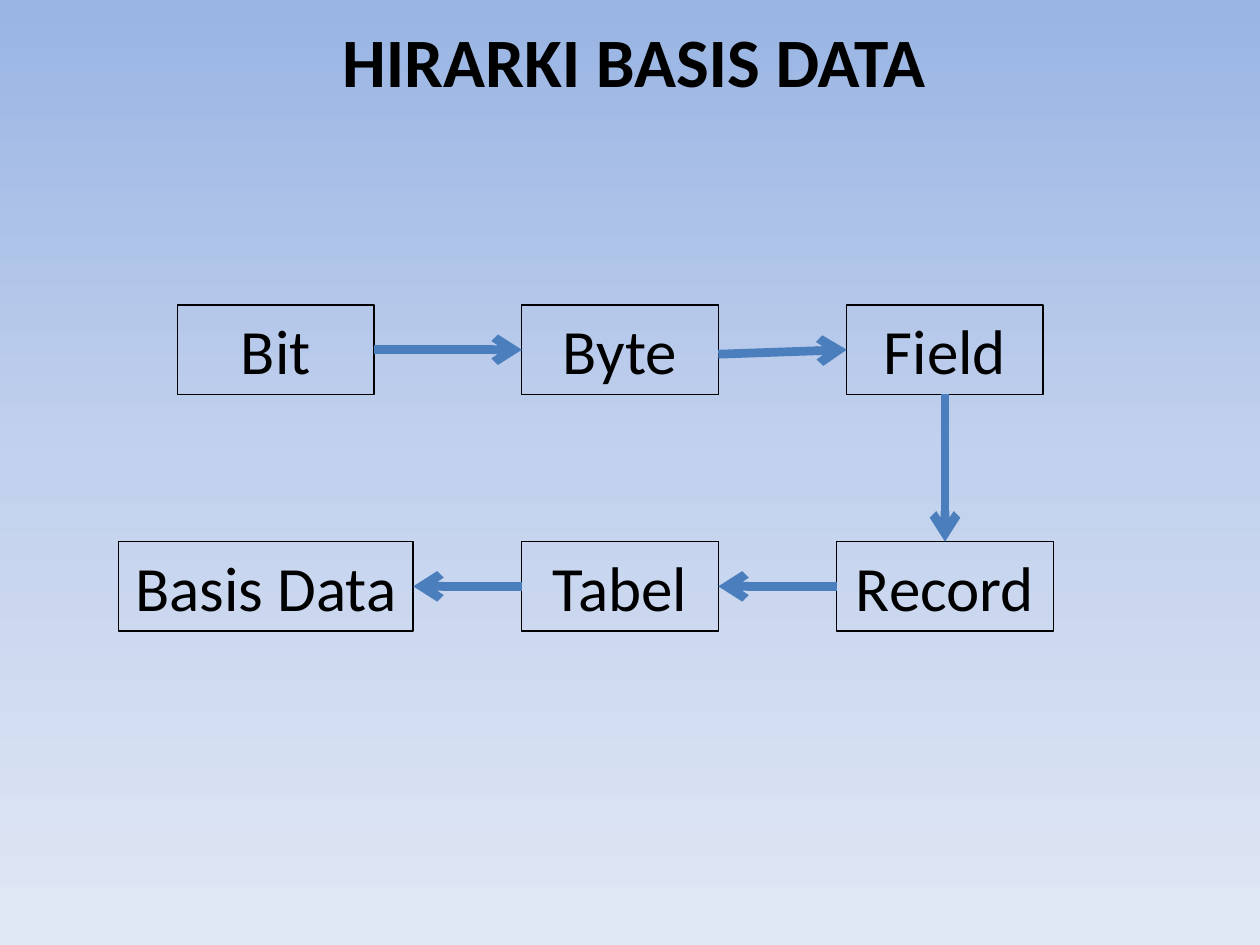
import lxml.etree
import pptx
import pptx.dml.color
import pptx.enum.shapes
import pptx.enum.text
import pptx.oxml.ns
import pptx.util

Cm = pptx.util.Cm
Pt = pptx.util.Pt
qn = pptx.oxml.ns.qn
TOP, LEFT, BOTTOM, RIGHT = range(4)
BOX_HEIGHT = 1.8
BLACK = "000000"


def color(value):
    return pptx.dml.color.RGBColor.from_string(value)


def set_background(slide, stops):
    fill = slide.background.fill
    fill.gradient()
    fill.gradient_angle = 270
    gs_list = next(slide.element.iter(qn("a:gsLst")))
    for gs in list(gs_list):
        gs_list.remove(gs)
    for percent, value in stops:
        gs = lxml.etree.SubElement(gs_list, qn("a:gs"), pos=str(percent * 1000))
        lxml.etree.SubElement(gs, qn("a:srgbClr"), val=value)


def set_text(sp, text, size, bold=False):
    tf = sp.text_frame
    tf.text = text
    tf.word_wrap = True
    tf.vertical_anchor = pptx.enum.text.MSO_ANCHOR.MIDDLE
    p = tf.paragraphs[0]
    p.alignment = pptx.enum.text.PP_ALIGN.CENTER
    font = p.runs[0].font
    font.name = "Calibri"
    font.size = Pt(size)
    font.bold = bold
    font.color.rgb = color(BLACK)


def add_title(slide, text):
    sp = slide.shapes.add_textbox(Cm(1.35), Cm(0.2), Cm(22.86), Cm(2))
    set_text(sp, text, 39.6, bold=True)


def add_box(slide, text, center, top, width):
    sp = slide.shapes.add_shape(
        pptx.enum.shapes.MSO_SHAPE.RECTANGLE,
        Cm(center - width / 2), Cm(top), Cm(width), Cm(BOX_HEIGHT))
    sp.shadow.inherit = False
    sp.fill.background()
    sp.line.color.rgb = color(BLACK)
    sp.line.width = Pt(0.75)
    set_text(sp, text, 36)
    sp.text_frame.auto_size = pptx.enum.text.MSO_AUTO_SIZE.SHAPE_TO_FIT_TEXT
    return sp


def side_point(sp, side):
    x = {LEFT: 0, RIGHT: sp.width}.get(side, sp.width // 2)
    y = {TOP: 0, BOTTOM: sp.height}.get(side, sp.height // 2)
    return sp.left + x, sp.top + y


def add_arrow(slide, source, source_side, target, target_side, start_drop=0):
    x, y = side_point(source, source_side)
    line = slide.shapes.add_connector(
        pptx.enum.shapes.MSO_CONNECTOR.STRAIGHT,
        x, y + Cm(start_drop), *side_point(target, target_side))
    if not start_drop:
        line.begin_connect(source, source_side)
    line.end_connect(target, target_side)
    line.line.color.rgb = color("4B7EBC")
    line.line.width = Pt(5)
    lxml.etree.SubElement(line.line._get_or_add_ln(), qn("a:tailEnd"), type="arrow")
    lxml.etree.SubElement(line._element.spPr, qn("a:effectLst"))


def main():
    prs = pptx.Presentation()
    prs.slide_width, prs.slide_height = Cm(25.4), Cm(19.05)
    slide = prs.slides.add_slide(prs.slide_layouts[6])
    set_background(slide, [(0, "9AB5E4"), (50, "C2D1ED"), (100, "E1E8F5")])
    add_title(slide, "HIRARKI BASIS DATA")

    upper, lower = 6.15, 10.92
    bit = add_box(slide, "Bit", 5.56, upper, 3.96)
    byte = add_box(slide, "Byte", 12.5, upper, 3.96)
    field = add_box(slide, "Field", 19.05, upper, 3.96)
    record = add_box(slide, "Record", 19.05, lower, 4.37)
    table = add_box(slide, "Tabel", 12.5, lower, 3.96)
    database = add_box(slide, "Basis Data", 5.36, lower, 5.94)

    add_arrow(slide, bit, RIGHT, byte, LEFT)
    add_arrow(slide, byte, RIGHT, field, LEFT, start_drop=0.09)
    add_arrow(slide, field, BOTTOM, record, TOP)
    add_arrow(slide, table, LEFT, database, RIGHT)
    add_arrow(slide, record, LEFT, table, RIGHT)
    prs.save("out.pptx")


if __name__ == "__main__":
    main()
